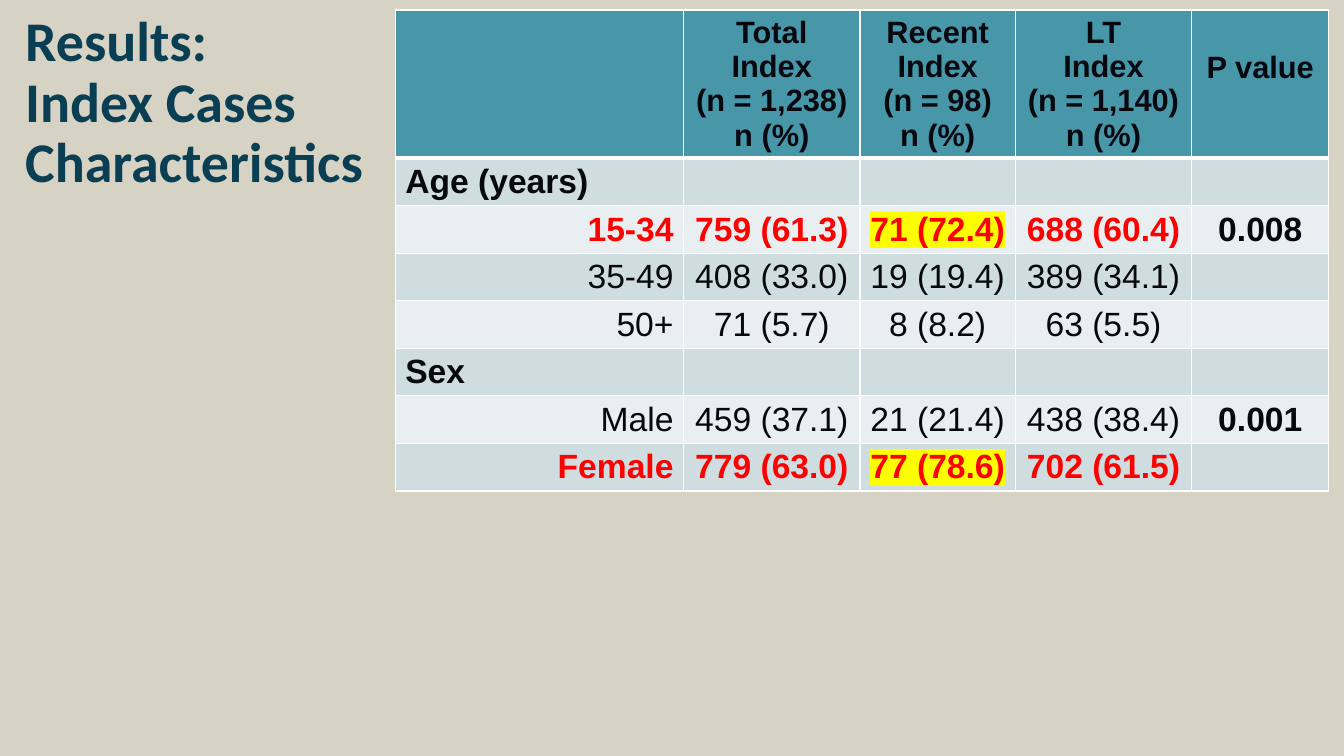
from lxml import etree
from pptx import Presentation
from pptx.dml.color import RGBColor
from pptx.enum.text import MSO_ANCHOR, MSO_AUTO_SIZE, PP_ALIGN
from pptx.oxml.ns import qn
from pptx.util import Inches, Pt

LEFT, CENTER, RIGHT = PP_ALIGN.LEFT, PP_ALIGN.CENTER, PP_ALIGN.RIGHT
MIDDLE, NO_FIT = MSO_ANCHOR.MIDDLE, MSO_AUTO_SIZE.NONE

# Content
TITLE = "Results:\vIndex Cases\vCharacteristics"
HEADERS = [
    "",
    "Total\nIndex\n(n = 1,238)\nn (%)",
    "Recent\nIndex\n(n = 98)\nn (%)",
    "LT\nIndex\n(n = 1,140)\nn (%)",
    "P value",
]
ROWS = [
    ("Age (years)", "", "", "", ""),
    ("15-34", "759 (61.3)", "71 (72.4)", "688 (60.4)", "0.008"),
    ("35-49", "408 (33.0)", "19 (19.4)", "389 (34.1)", ""),
    ("50+", "71 (5.7)", "8 (8.2)", "63 (5.5)", ""),
    ("Sex", "", "", "", ""),
    ("Male", "459 (37.1)", "21 (21.4)", "438 (38.4)", "0.001"),
    ("Female", "779 (63.0)", "77 (78.6)", "702 (61.5)", ""),
]
GROUPS = {"Age (years)", "Sex"}
KEY_ROWS = {"15-34", "Female"}
RECENT_COLUMN, P_COLUMN = 2, 4

# Grid and palette
COLUMN_WIDTHS = [2.86, 1.75, 1.54, 1.75, 1.36]
HEADER_HEIGHT, ROW_HEIGHT = 1.46, 0.47
TABLE_LEFT, TABLE_TOP = 3.92, 0.1
BACKGROUND, TITLE_COLOR, INK = "D6D2C4", "0A3E53", "05080E"
HEADER_FILL, BANDS = "4797A8", ("CFDDE1", "E9EFF1")
KEY_COLOR, HIGHLIGHT, BORDER = "FF0000", "FFFF00", "FFFFFF"


def color(hex_value):
    return RGBColor.from_string(hex_value)


def format_font(font, hex_value, **values):
    for name, value in values.items():
        setattr(font, name, value)
    font.color.rgb = color(hex_value)


def add_color_element(parent, tag, hex_value):
    element = etree.SubElement(parent, qn(tag))
    etree.SubElement(element, qn("a:srgbClr"), val=hex_value)
    return element


def style_cell(cell, fill, top=1, bottom=1):
    properties = cell._tc.get_or_add_tcPr()
    for side, width in (("L", 1), ("R", 1), ("T", top), ("B", bottom)):
        line = etree.SubElement(properties, qn(f"a:ln{side}"), w=str(Pt(width)))
        add_color_element(line, "a:solidFill", BORDER)
    cell.fill.solid()
    cell.fill.fore_color.rgb = color(fill)


def write_cell(cell, text, alignment, size, ink, bold, highlight=False):
    if not text:
        return
    cell.text = text
    for paragraph in cell.text_frame.paragraphs:
        paragraph.alignment = alignment
        run = paragraph.runs[0]
        format_font(run.font, ink, name="Arial", size=Pt(size), bold=bold)
        if highlight:
            properties = run._r.get_or_add_rPr()
            mark = add_color_element(properties, "a:highlight", HIGHLIGHT)
            properties.find(qn("a:solidFill")).addnext(mark)


presentation = Presentation()
presentation.slide_width, presentation.slide_height = Inches(13.33), Inches(7.5)
slide = presentation.slides.add_slide(presentation.slide_layouts[5])
slide.background.fill.solid()
slide.background.fill.fore_color.rgb = color(BACKGROUND)

# Title
title = slide.shapes.title
title.left, title.top, title.width, title.height = map(Inches, (0.15, 0.61, 4.61, 0.85))
frame = title.text_frame
frame.text = TITLE
frame.auto_size, frame.vertical_anchor, frame.word_wrap = NO_FIT, MIDDLE, True
paragraph = frame.paragraphs[0]
paragraph.alignment, paragraph.line_spacing = LEFT, 0.9
for run in paragraph.runs:
    format_font(run.font, TITLE_COLOR, name="Calibri", size=Pt(40), bold=True)

# Table grid
row_heights = [HEADER_HEIGHT] + [ROW_HEIGHT] * len(ROWS)
table = slide.shapes.add_table(
    len(row_heights), len(COLUMN_WIDTHS), Inches(TABLE_LEFT), Inches(TABLE_TOP),
    Inches(sum(COLUMN_WIDTHS)), Inches(sum(row_heights))).table
table.horz_banding = False
for column, width in zip(table.columns, COLUMN_WIDTHS):
    column.width = Inches(width)
for row, height in zip(table.rows, row_heights):
    row.height = Inches(height)

# Header row, with the P value one line down
for index, text in enumerate(HEADERS):
    cell = table.cell(0, index)
    style_cell(cell, HEADER_FILL, bottom=3)
    write_cell(cell, text, CENTER, 22, INK, True)
table.cell(0, P_COLUMN).margin_top = Inches(0.4)

# Body rows
for row_index, values in enumerate(ROWS):
    label = values[0]
    is_key = label in KEY_ROWS
    for index, text in enumerate(values):
        cell = table.cell(row_index + 1, index)
        style_cell(cell, BANDS[row_index % 2], top=1 if row_index else 3)
        alignment = CENTER if index else LEFT if label in GROUPS else RIGHT
        ink = KEY_COLOR if is_key and index != P_COLUMN else INK
        bold = is_key or label in GROUPS or index == P_COLUMN
        write_cell(cell, text, alignment, 24, ink, bold,
                   highlight=is_key and index == RECENT_COLUMN)

presentation.save("out.pptx")
